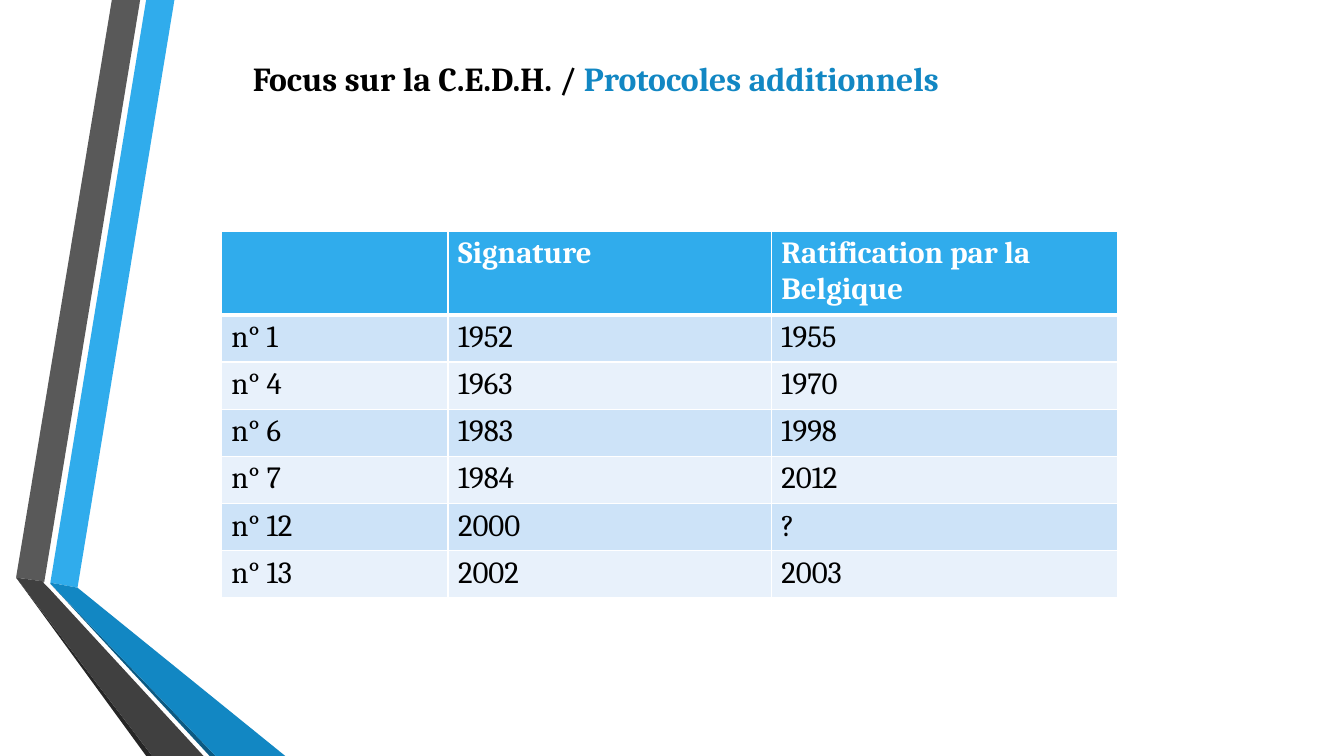
from lxml.etree import SubElement
from pptx import Presentation
from pptx.dml.color import RGBColor
from pptx.enum.text import MSO_ANCHOR
from pptx.oxml.ns import qn
from pptx.util import Pt

COLORS = {
    "black": "000000", "white": "FFFFFF",
    "sky": "30ACEC", "blue": "1287C3", "navy": "0C5A82",
    "gray": "595959", "charcoal": "404040", "ink": "262626",
    "band_dark": "CDE3F8", "band_light": "E8F1FB",
}
FONT = "Cambria"

# Ribbon facets, back to front: colour and outline in points
RIBBONS = [
    ("sky", [(36, 416.2), (55.4, 419.8), (124.6, 0), (104.4, 0)]),
    ("gray", [(100.1, 0), (79.9, 0), (11.5, 412.6), (31.7, 415.4)]),
    ("ink", [(11.5, 412.6), (104.4, 540), (108.7, 540)]),
    ("navy", [(36, 416.9), (149.8, 540), (154.1, 540)]),
    ("blue", [(36, 416.2), (36, 416.9), (154.1, 540), (203.8, 540), (55.4, 419.8)]),
    ("charcoal", [(145.4, 540), (34.6, 419.8), (31, 416.2), (31.7, 415.4),
                  (11.5, 412.6), (108.7, 540)]),
]

PROTOCOLS = [
    ("", "Signature", "Ratification par la Belgique"),
    ("n° 1", "1952", "1955"),
    ("n° 4", "1963", "1970"),
    ("n° 6", "1983", "1998"),
    ("n° 7", "1984", "2012"),
    ("n° 12", "2000", "?"),
    ("n° 13", "2002", "2003"),
]
COLUMN_WIDTHS = [162, 231, 247]
HEADER_HEIGHT, ROW_HEIGHT = 59.6, 33.6


def rgb(name):
    return RGBColor.from_string(COLORS[name])


def add_run(p, text, size, color, bold):
    r = p.add_run()
    r.text = text
    for attr, value in {"name": FONT, "size": Pt(size), "bold": bold}.items():
        setattr(r.font, attr, value)
    r.font.color.rgb = rgb(color)


def add_ribbon(s, color, points):
    start, *rest = [(Pt(x), Pt(y)) for x, y in points]
    builder = s.shapes.build_freeform(*start)
    builder.add_line_segments(rest, close=True)
    sp = builder.convert_to_shape()
    sp.shadow.inherit = False
    sp.fill.solid()
    sp.fill.fore_color.rgb = rgb(color)
    sp.line.fill.background()


def add_title(s, parts):
    sp = s.shapes.add_textbox(Pt(173.5), Pt(9.4), Pt(777), Pt(220))
    tf = sp.text_frame
    layout = {"word_wrap": True, "vertical_anchor": MSO_ANCHOR.TOP, "margin_top": Pt(32)}
    for attr, value in layout.items():
        setattr(tf, attr, value)
    for text, color in parts:
        add_run(tf.paragraphs[0], text, 24, color, True)


def set_borders(cell, top, bottom):
    tc_pr = cell._tc.get_or_add_tcPr()
    for tag, width in {"a:lnL": 1, "a:lnR": 1, "a:lnT": top, "a:lnB": bottom}.items():
        ln = SubElement(tc_pr, qn(tag), w=str(Pt(width)))
        fill = SubElement(ln, qn("a:solidFill"))
        SubElement(fill, qn("a:srgbClr"), val=COLORS["white"])


def add_protocol_table(s, rows):
    heights = [HEADER_HEIGHT] + [ROW_HEIGHT] * (len(rows) - 1)
    table = s.shapes.add_table(len(rows), len(COLUMN_WIDTHS), Pt(158), Pt(165),
                               Pt(sum(COLUMN_WIDTHS)), Pt(sum(heights))).table
    for column, width in zip(table.columns, COLUMN_WIDTHS):
        column.width = Pt(width)
    for i, (texts, height) in enumerate(zip(rows, heights)):
        table.rows[i].height = Pt(height)
        header = i == 0
        band = "sky" if header else "band_dark" if i % 2 else "band_light"
        for j, text in enumerate(texts):
            cell = table.cell(i, j)
            # A thick rule separates the header from the body
            set_borders(cell, top=3 if i == 1 else 1, bottom=3 if header else 1)
            cell.fill.solid()
            cell.fill.fore_color.rgb = rgb(band)
            if text:
                add_run(cell.text_frame.paragraphs[0], text, 22,
                        "white" if header else "black", header)


def main():
    prs = Presentation()
    prs.slide_width, prs.slide_height = Pt(960), Pt(540)
    s = prs.slides.add_slide(prs.slide_layouts[6])

    # Folded ribbons on the left
    for color, points in RIBBONS:
        add_ribbon(s, color, points)

    # Title and table
    add_title(s, [("Focus sur la C.E.D.H. / ", "black"),
                  ("Protocoles additionnels", "blue")])
    add_protocol_table(s, PROTOCOLS)

    prs.save("out.pptx")


if __name__ == "__main__":
    main()
